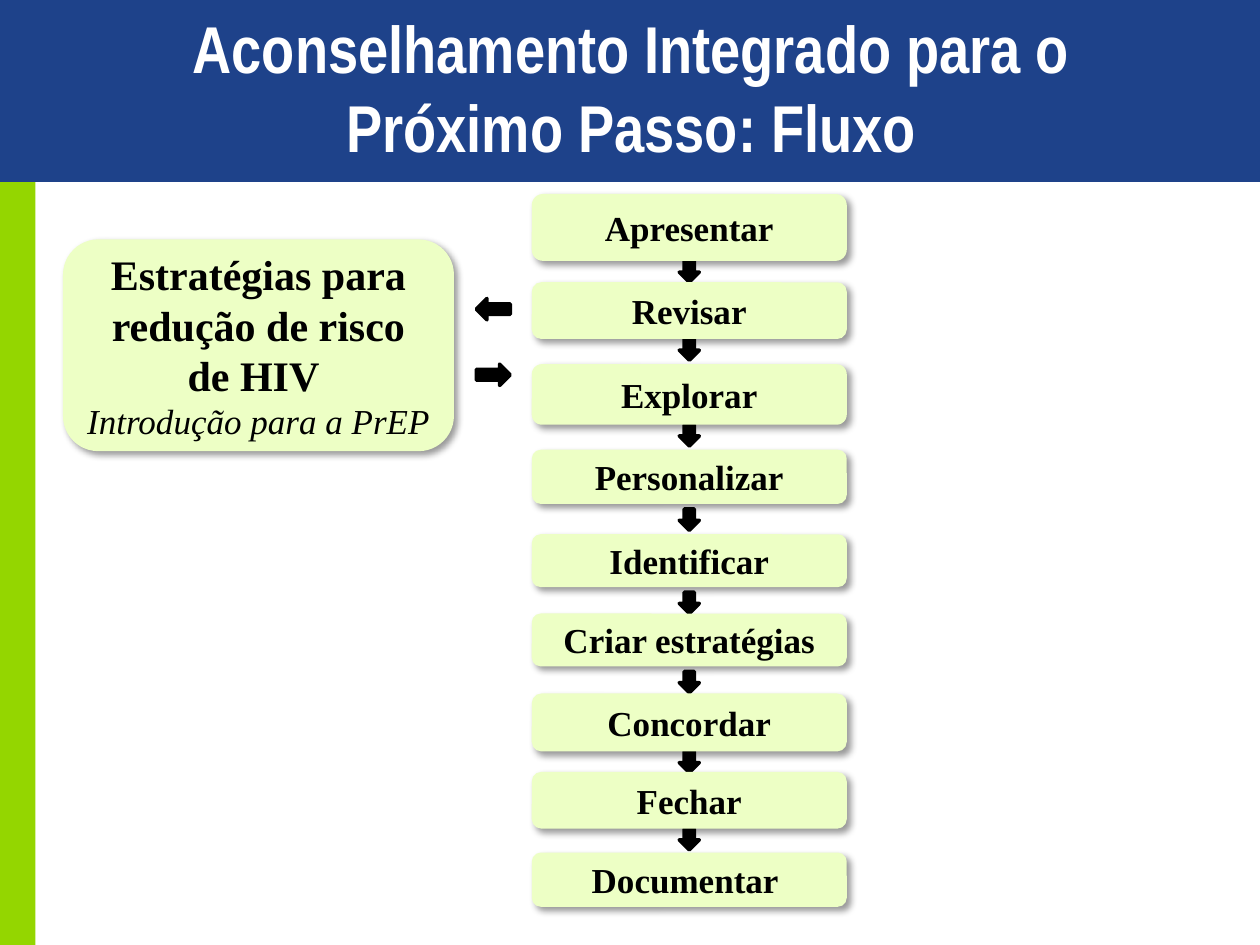
import pptx
import pptx.dml.color
import pptx.enum.shapes
import pptx.enum.text
import pptx.oxml
import pptx.oxml.ns
import pptx.util

Pt = pptx.util.Pt
SHAPES = pptx.enum.shapes.MSO_SHAPE

BLUE, GREEN, PALE, BLACK, WHITE = "1E428A", "94D600", "EDFFC5", "000000", "FFFFFF"
SERIF = "Times New Roman"
STEP_LEFT, STEP_WIDTH = 303.9, 180
ARROW_WIDTH, ARROW_HEIGHT = 11.5, 12.2

STEPS = [
    {"name": "Apresentar", "top": 110.9, "height": 38.2, "gap": 0},
    {"name": "Revisar", "top": 161.3, "height": 32.4, "gap": 0},
    {"name": "Explorar", "top": 208.1, "height": 34.6, "gap": 0},
    {"name": "Personalizar", "top": 257, "height": 31, "gap": 2.9},
    {"name": "Identificar", "top": 305.3, "height": 30.2, "gap": 2.9},
    {"name": "Criar estratégias", "top": 350.6, "height": 30.2, "gap": 2.9},
    {"name": "Concordar", "top": 396.3, "height": 33.1, "gap": 0},
    {"name": "Fechar", "top": 441.1, "height": 32.4, "gap": 0},
    {"name": "Documentar ", "top": 487.2, "height": 31, "gap": 0},
]

SHADOW = (
    '<a:effectLst xmlns:a="http://schemas.openxmlformats.org/drawingml/2006/main">'
    '<a:outerShdw blurRad="50800" dist="38100" dir="2700000" algn="tl" rotWithShape="0">'
    '<a:srgbClr val="000000"><a:alpha val="40000"/></a:srgbClr>'
    "</a:outerShdw></a:effectLst>"
)


def color(hex_string):
    return pptx.dml.color.RGBColor.from_string(hex_string)


def set_font(font, name, size, hex_string, bold=True, italic=False):
    font.name = name
    font.size = Pt(size)
    font.color.rgb = color(hex_string)
    font.bold = bold
    font.italic = italic


def add_filled(slide, kind, left, top, width, height, fill):
    shape = slide.shapes.add_shape(kind, Pt(left), Pt(top), Pt(width), Pt(height))
    shape.shadow.inherit = False
    shape.fill.solid()
    shape.fill.fore_color.rgb = color(fill)
    shape.line.fill.background()
    return shape


def add_arrow(slide, kind, left, top, width, height):
    arrow = add_filled(slide, kind, left, top, width, height, BLACK)
    arrow.line.color.rgb = color(BLACK)
    arrow.line.width = Pt(2)


def center_text(shape):
    frame = shape.text_frame
    frame.word_wrap = True
    frame.vertical_anchor = pptx.enum.text.MSO_ANCHOR.MIDDLE
    paragraph = frame.paragraphs[0]
    paragraph.alignment = pptx.enum.text.PP_ALIGN.CENTER
    return paragraph


def add_card(slide, text, left, top, width, height, size):
    card = add_filled(slide, SHAPES.ROUNDED_RECTANGLE, left, top, width, height, PALE)
    properties = card._element.spPr
    properties.remove(properties.find(pptx.oxml.ns.qn("a:effectLst")))
    properties.append(pptx.oxml.parse_xml(SHADOW))
    paragraph = center_text(card)
    paragraph.text = text
    set_font(paragraph.font, SERIF, size, BLACK)
    return card


def add_title(slide, text):
    box = slide.shapes.add_textbox(Pt(36.7), Pt(15.8), Pt(648), Pt(67.7))
    box.text_frame.margin_left = box.text_frame.margin_right = Pt(30)
    paragraph = center_text(box)
    paragraph.text = text
    set_font(paragraph.font, "Arial Narrow", 37.8, WHITE)


def add_flow(slide):
    arrow_left = STEP_LEFT + (STEP_WIDTH - ARROW_WIDTH) / 2
    for step in STEPS[:-1]:
        arrow_top = step["top"] + step["height"] + step["gap"]
        add_arrow(slide, SHAPES.DOWN_ARROW, arrow_left, arrow_top,
                  ARROW_WIDTH, ARROW_HEIGHT)
    for step in STEPS:
        add_card(slide, step["name"], STEP_LEFT, step["top"],
                 STEP_WIDTH, step["height"], 20)


def add_strategies(slide):
    card = add_card(slide, "Estratégias para\vredução de risco de HIV ",
                    36, 136.8, 223.4, 121, 24)
    card.text_frame.margin_left = card.text_frame.margin_right = Pt(7.5)
    paragraph = card.text_frame.paragraphs[0]
    paragraph.add_line_break()
    run = paragraph.add_run()
    run.text = "Introdução para a PrEP"
    set_font(run.font, SERIF, 20, BLACK, bold=False, italic=True)
    for kind, top in ((SHAPES.LEFT_ARROW, 170.6), (SHAPES.RIGHT_ARROW, 208.1)):
        add_arrow(slide, kind, 272.2, top, 19.4, 12.2)


def main():
    presentation = pptx.Presentation()
    presentation.slide_width = Pt(720)
    presentation.slide_height = Pt(540)
    slide = presentation.slides.add_slide(presentation.slide_layouts[6])
    add_filled(slide, SHAPES.RECTANGLE, 0, 94.3, 20.2, 445.7, GREEN)
    add_filled(slide, SHAPES.RECTANGLE, 0, 0, 720, 104, BLUE)
    add_title(slide, "Aconselhamento Integrado para o Próximo Passo: Fluxo")
    add_flow(slide)
    add_strategies(slide)
    presentation.save("out.pptx")


if __name__ == "__main__":
    main()
